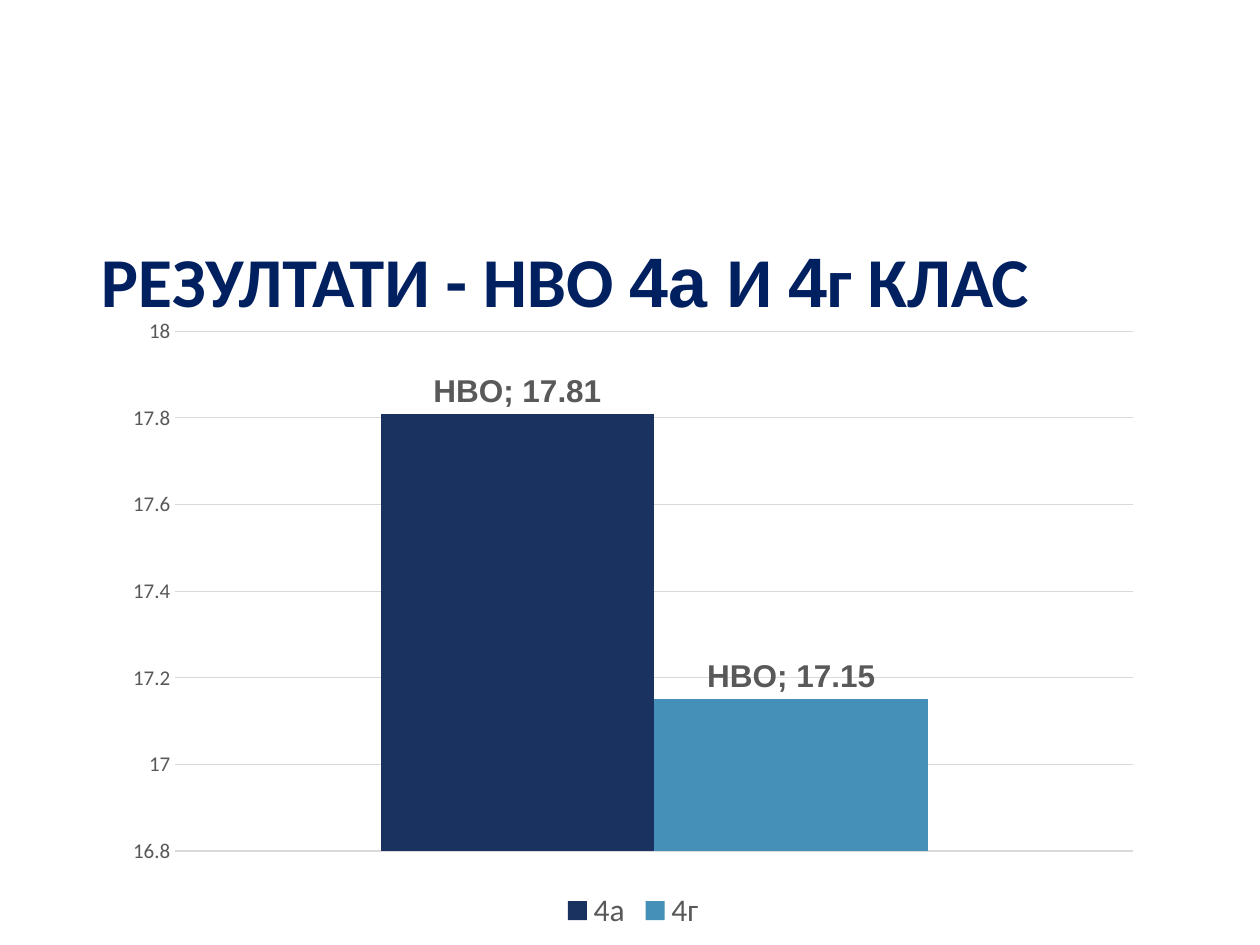
"""Build a slide with a title and a column chart of class results."""
from typing import NamedTuple

from lxml import etree
from pptx import Presentation
from pptx.chart.data import CategoryChartData
from pptx.dml.color import RGBColor
from pptx.enum.chart import XL_CHART_TYPE, XL_LABEL_POSITION, XL_LEGEND_POSITION, XL_TICK_MARK
from pptx.enum.text import MSO_ANCHOR, MSO_AUTO_SIZE, PP_ALIGN
from pptx.oxml.ns import qn
from pptx.util import Pt

COLUMN = XL_CHART_TYPE.COLUMN_CLUSTERED
OUTER = XL_LABEL_POSITION.OUTSIDE_END
BOTTOM = XL_LEGEND_POSITION.BOTTOM
NO_TICK = XL_TICK_MARK.NONE
LOW = MSO_ANCHOR.BOTTOM
FIXED = MSO_AUTO_SIZE.NONE
LEFT = PP_ALIGN.LEFT
NAVY, GREY, RULE = "002060", "595959", "D9D9D9"


class Part(NamedTuple):
    text: str
    face: str


class Group(NamedTuple):
    name: str
    score: float
    fill: str


PARTS = [
    Part("РЕЗУЛТАТИ - НВО ", "Calibri"),
    Part("4а ", "Arial"),
    Part("И ", "Calibri"),
    Part("4", "Arial"),
    Part("г КЛАС", "Calibri"),
]
GROUPS = [Group("4а", 17.81, "1A3260"), Group("4г", 17.15, "4590B8")]


def color(code: str) -> RGBColor:
    return RGBColor.from_string(code)


def style(font, face: str, size: float, code: str, bold: bool = False) -> None:
    font.name, font.size, font.bold = face, Pt(size), bold
    font.color.rgb = color(code)


def draw_title(title, parts: list[Part]) -> None:
    title.left, title.top = Pt(50.4), Pt(102.24)
    title.width, title.height = Pt(629.28), Pt(84.96)
    frame = title.text_frame
    frame.auto_size, frame.vertical_anchor = FIXED, LOW
    line = frame.paragraphs[0]
    line.alignment = LEFT
    for part in parts:
        run = line.add_run()
        run.text = part.text
        style(run.font, part.face, 40, NAVY, True)


def draw_bar(series, group: Group) -> None:
    series.format.fill.solid()
    series.format.fill.fore_color.rgb = color(group.fill)
    series.invert_if_negative = False
    labels = series.data_labels
    labels.show_value = labels.show_category_name = True
    labels.position = OUTER
    style(labels.font, "Arial", 18, GREY, True)
    dlbls = series._element.find(qn("c:dLbls"))
    mark = etree.Element(qn("c:separator"))
    mark.text = "; "
    dlbls.find(qn("c:showBubbleSize")).addnext(mark)


def draw_chart(slide, groups: list[Group]) -> None:
    data = CategoryChartData()
    data.categories = ["НВО"]
    for group in groups:
        data.add_series(group.name, [group.score])
    chart = slide.shapes.add_chart(
        COLUMN, Pt(64.08), Pt(174.96), Pt(595.44), Pt(360), data).chart
    style(chart.font, "Calibri", 10, "000000")
    chart.has_title = False
    chart.has_legend = True
    chart.legend.position = BOTTOM
    chart.legend.include_in_layout = False
    style(chart.legend.font, "Calibri", 18, GREY)

    plot = chart.plots[0]
    plot.gap_width, plot.overlap, plot.vary_by_categories = 150, 0, False
    for series, group in zip(plot.series, groups):
        draw_bar(series, group)

    chart.category_axis.visible = False
    axis = chart.value_axis
    axis.minimum_scale, axis.maximum_scale, axis.major_unit = 16.8, 18, 0.2
    axis.major_tick_mark = axis.minor_tick_mark = NO_TICK
    axis.format.line.fill.background()
    style(axis.tick_labels.font, "Calibri", 12, GREY)
    grid = axis.major_gridlines.format.line
    grid.width = Pt(0.75)
    grid.color.rgb = color(RULE)


def main() -> None:
    deck = Presentation()
    deck.slide_width, deck.slide_height = Pt(720), Pt(540)
    slide = deck.slides.add_slide(deck.slide_layouts[5])
    draw_title(slide.shapes.title, PARTS)
    draw_chart(slide, GROUPS)
    deck.save("out.pptx")


if __name__ == "__main__":
    main()
